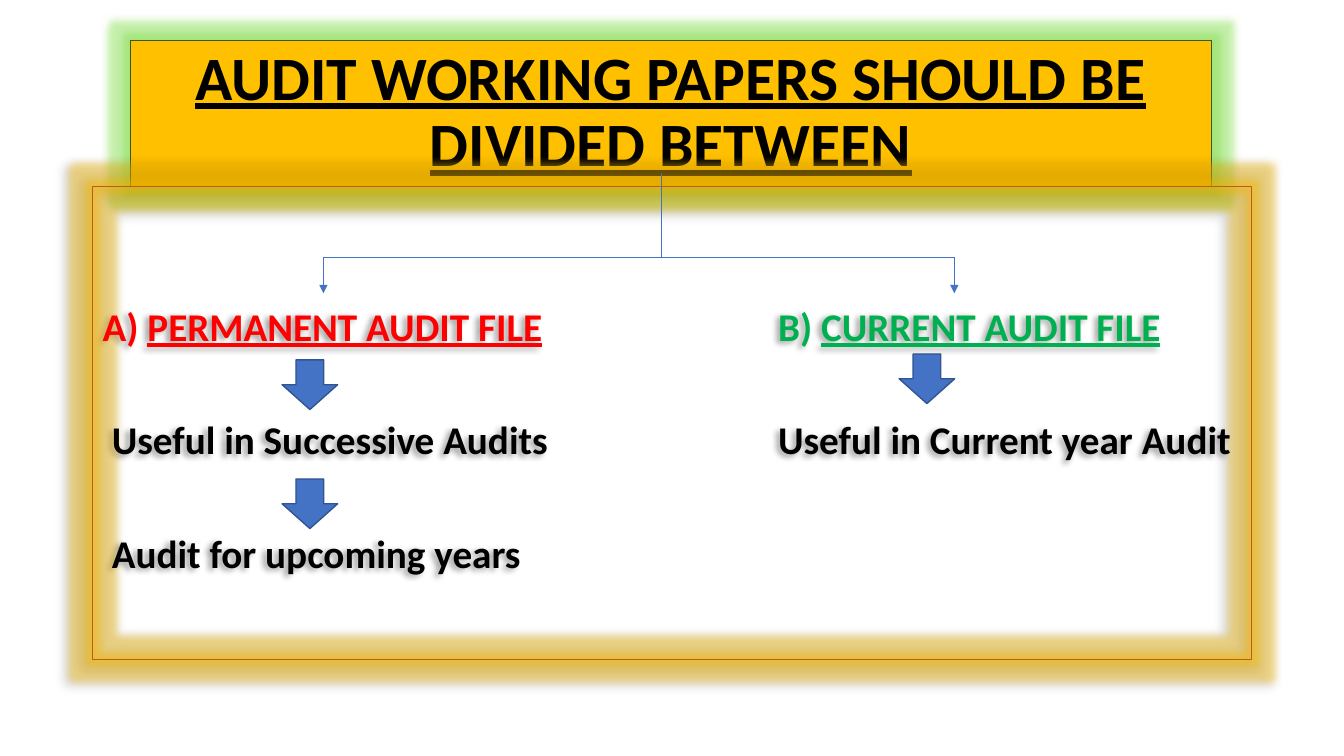
from lxml import etree
from pptx import Presentation
from pptx.dml.color import RGBColor
from pptx.enum.shapes import MSO_CONNECTOR, MSO_SHAPE
from pptx.enum.text import MSO_ANCHOR, PP_ALIGN
from pptx.oxml.ns import qn
from pptx.util import Cm, Pt

RECTANGLE = MSO_SHAPE.RECTANGLE
DOWN_ARROW = MSO_SHAPE.DOWN_ARROW
STRAIGHT = MSO_CONNECTOR.STRAIGHT
MIDDLE, TOP = MSO_ANCHOR.MIDDLE, MSO_ANCHOR.TOP
CENTER, LEFT = PP_ALIGN.CENTER, PP_ALIGN.LEFT

BLACK, RED, GREEN, BLUE = "000000", "FF0000", "00B050", "4472C4"


def color(value):
    return RGBColor.from_string(value)


class AuditSlide:
    """Draws styled elements on the current slide."""

    font = "Calibri"

    def __init__(self, page):
        self.page = page

    def shape(self, kind, left, top, width, height, fill, line, weight):
        shape = self.page.shapes.add_shape(kind, Cm(left), Cm(top), Cm(width), Cm(height))
        shape.shadow.inherit = False
        if fill:
            shape.fill.solid()
            shape.fill.fore_color.rgb = color(fill)
        else:
            shape.fill.background()
        shape.line.color.rgb = color(line)
        shape.line.width = Pt(weight)
        return shape

    def effect(self, shape, kind, value, **settings):
        effects = shape._element.spPr.find(qn("a:effectLst"))
        effect = etree.SubElement(effects, qn(f"a:{kind}"), **settings)
        tint = etree.SubElement(effect, qn("a:srgbClr"), val=value)
        etree.SubElement(tint, qn("a:alpha"), val="40000")

    def glow(self, shape, value):
        self.effect(shape, "glow", value, rad=str(Pt(11)))

    def shadow(self, shape):
        self.effect(shape, "outerShdw", BLACK, blurRad=str(Pt(4)), dist=str(Pt(3)),
                    dir="8100000", algn="tr", rotWithShape="0")

    def frame(self, shape, anchor, top_margin=0.13):
        frame = shape.text_frame
        frame.word_wrap = True
        frame.vertical_anchor = anchor
        frame.margin_top = Cm(top_margin)
        return frame

    def paragraph(self, paragraph, spans, size, align, before=0, tabs=()):
        paragraph.alignment = align
        paragraph.line_spacing = 0.9
        paragraph.space_before = Pt(before)
        if tabs:
            tab_list = etree.SubElement(paragraph._p.get_or_add_pPr(), qn("a:tabLst"))
            for position in tabs:
                etree.SubElement(tab_list, qn("a:tab"), pos=str(Cm(position)), algn="l")
        for text, value, underline in spans:
            span = paragraph.add_run()
            span.text = text
            span.font.name = self.font
            span.font.size = Pt(size)
            span.font.bold = True
            span.font.underline = underline
            span.font.color.rgb = color(value)

    def line(self, start, end, arrow=False):
        line = self.page.shapes.add_connector(STRAIGHT, *map(Cm, start + end))
        line.line.color.rgb = color(BLUE)
        line.line.width = Pt(0.5)
        if arrow:
            etree.SubElement(line.line._get_or_add_ln(), qn("a:tailEnd"), type="triangle")
        etree.SubElement(line._element.spPr, qn("a:effectLst"))

    def down_arrow(self, left, top):
        self.shape(DOWN_ARROW, left, top, 1.4, 1.25, BLUE, "325491", 1)


def main():
    deck = Presentation()
    deck.slide_width, deck.slide_height = Cm(33.87), Cm(19.05)
    slide = AuditSlide(deck.slides.add_slide(deck.slide_layouts[6]))

    title = slide.shape(RECTANGLE, 3.28, 1.02, 27.25, 3.68, "FFC000", "385723", 0.75)
    slide.glow(title, "70D830")
    heading = slide.frame(title, MIDDLE).paragraphs[0]
    slide.paragraph(heading, [("AUDIT WORKING PAPERS SHOULD BE DIVIDED BETWEEN", BLACK, True)],
                    44, CENTER)

    body = slide.shape(RECTANGLE, 2.34, 4.7, 29.21, 11.91, None, "C55A11", 0.75)
    slide.glow(body, "FFC000")
    slide.shadow(body)
    frame = slide.frame(body, TOP, 3.05)
    rows = [
        [("A) ", RED, False), ("PERMANENT AUDIT FILE", RED, True),
         ("\tB) ", GREEN, False), ("CURRENT AUDIT FILE", GREEN, True)],
        [("\tUseful in Successive Audits\tUseful in Current year Audit", BLACK, False)],
        [("\tAudit for upcoming years", BLACK, False)],
    ]
    for index, spans in enumerate(rows):
        paragraph = frame.add_paragraph() if index else frame.paragraphs[0]
        slide.paragraph(paragraph, spans, 28, LEFT, 50.8 if index else 0, (0.23, 17.02))

    trunk, branch_top, branch_bottom = 16.66, 6.48, 7.39
    branches = (8.15, 24.05)
    slide.line((trunk, 4.37), (trunk, branch_top))
    slide.line((branches[0], branch_top), (branches[1], branch_top))
    for x in branches:
        slide.line((x, branch_top), (x, branch_bottom), arrow=True)

    for left, top in ((7.11, 9.07), (22.66, 8.92), (7.11, 12.07)):
        slide.down_arrow(left, top)

    deck.save("out.pptx")


if __name__ == "__main__":
    main()
